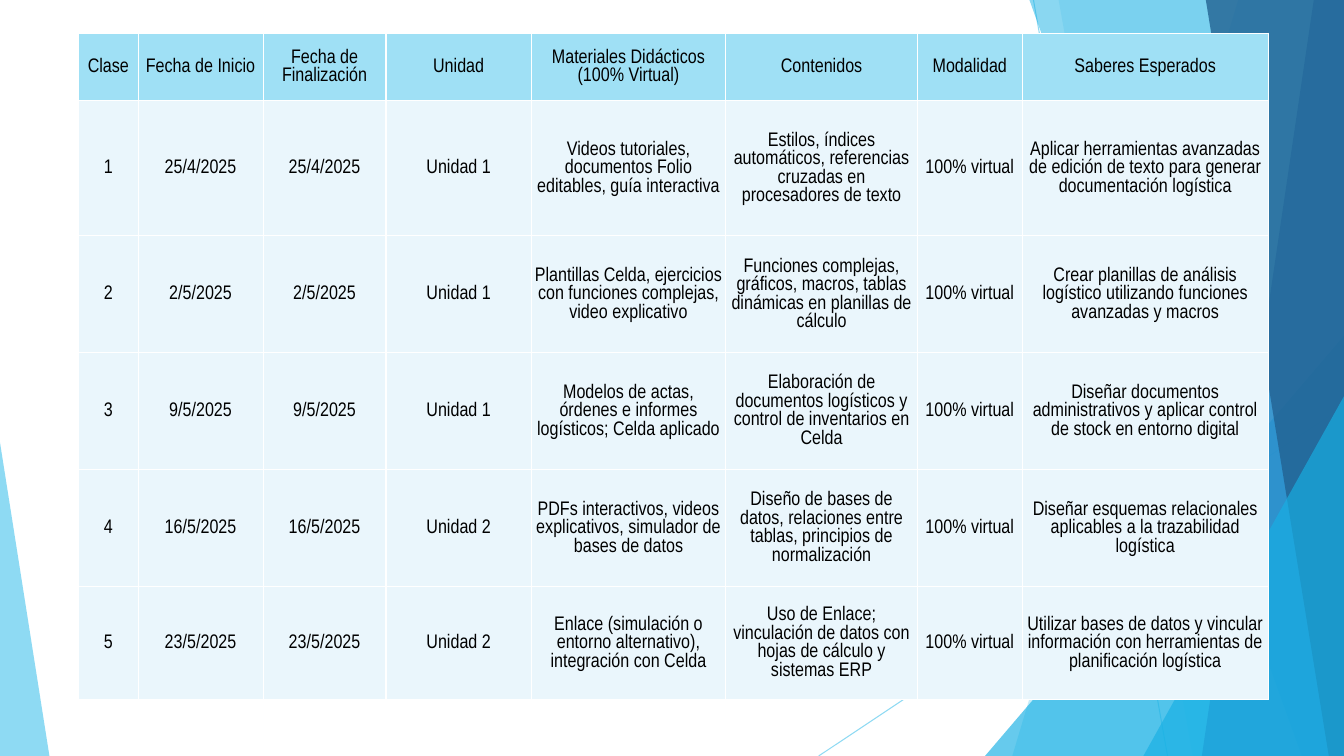
from dataclasses import dataclass

from lxml.etree import SubElement
from pptx import Presentation
from pptx.dml.color import RGBColor
from pptx.enum.shapes import MSO_CONNECTOR, MSO_SHAPE
from pptx.enum.text import MSO_ANCHOR, PP_ALIGN
from pptx.oxml.ns import qn
from pptx.util import Inches, Pt


@dataclass(frozen=True)
class Theme:
    """Colours, font and sizes of the deck."""

    sky: str = "5FCBEF"
    cyan: str = "17B0E4"
    blue: str = "2E83C3"
    navy: str = "226292"
    header: str = "9FE0F5"
    body: str = "EAF6FC"
    border: str = "FFFFFF"
    text: str = "000000"
    font: str = "Arial Narrow"
    text_size: float = 14
    border_width: float = 1
    ray_width: float = 0.75


THEME = Theme()
WIDTH, HEIGHT = 13.33, 7.5

COLUMN_WIDTHS = [0.59, 1.24, 1.22, 1.44, 1.93, 1.9, 1.04, 2.44]
ROW_HEIGHTS = [0.67, 1.34, 1.16, 1.16, 1.16, 1.12]
HEADINGS = ["Clase", "Fecha de Inicio", "Fecha de Finalización", "Unidad",
            "Materiales Didácticos (100% Virtual)", "Contenidos", "Modalidad",
            "Saberes Esperados"]
CLASSES = [
    ("25/4/2025", "Unidad 1",
     "Videos tutoriales, documentos Folio editables, guía interactiva",
     "Estilos, índices automáticos, referencias cruzadas en procesadores de texto",
     "Aplicar herramientas avanzadas de edición de texto para generar documentación logística"),
    ("2/5/2025", "Unidad 1",
     "Plantillas Celda, ejercicios con funciones complejas, video explicativo",
     "Funciones complejas, gráficos, macros, tablas dinámicas en planillas de cálculo",
     "Crear planillas de análisis logístico utilizando funciones avanzadas y macros"),
    ("9/5/2025", "Unidad 1",
     "Modelos de actas, órdenes e informes logísticos; Celda aplicado",
     "Elaboración de documentos logísticos y control de inventarios en Celda",
     "Diseñar documentos administrativos y aplicar control de stock en entorno digital"),
    ("16/5/2025", "Unidad 2",
     "PDFs interactivos, videos explicativos, simulador de bases de datos",
     "Diseño de bases de datos, relaciones entre tablas, principios de normalización",
     "Diseñar esquemas relacionales aplicables a la trazabilidad logística"),
    ("23/5/2025", "Unidad 2",
     "Enlace (simulación o entorno alternativo), integración con Celda",
     "Uso de Enlace; vinculación de datos con hojas de cálculo y sistemas ERP",
     "Utilizar bases de datos y vincular información con herramientas de planificación logística"),
]


def set_opacity(color_format, percent):
    """Make a solid colour partly transparent."""
    color = color_format._xFill.find(qn("a:srgbClr"))
    SubElement(color, qn("a:alpha"), val=str(percent * 1000))


def paint(shape, color, opacity):
    """Give a shape a translucent fill with no line or shadow."""
    shape.shadow.inherit = False
    shape.line.fill.background()
    shape.fill.solid()
    shape.fill.fore_color.rgb = RGBColor.from_string(color)
    set_opacity(shape.fill.fore_color, opacity)


def add_ray(slide, start, end):
    """Draw one thin translucent line."""
    points = [Inches(value) for value in (*start, *end)]
    ray = slide.shapes.add_connector(MSO_CONNECTOR.STRAIGHT, *points)
    ray.line.width = Pt(THEME.ray_width)
    ray.line.color.rgb = RGBColor.from_string(THEME.sky)
    properties = ray._element.spPr
    color = properties.find(".//" + qn("a:srgbClr"))
    SubElement(color, qn("a:alpha"), val="70000")
    SubElement(properties, qn("a:effectLst"))


def add_band(slide, top_left, bottom_left, color, opacity):
    """Draw a full-height band from a slanted edge to the right side."""
    builder = slide.shapes.build_freeform(Inches(top_left), 0)
    corners = [(WIDTH, 0), (WIDTH, HEIGHT), (bottom_left, HEIGHT)]
    builder.add_line_segments([(Inches(x), Inches(y)) for x, y in corners], close=True)
    paint(builder.convert_to_shape(), color, opacity)


def add_wedge(slide, left, top, width, apex, color, opacity):
    """Draw a triangle that stands on the bottom of the slide."""
    box = [Inches(value) for value in (left, top, width, HEIGHT - top)]
    wedge = slide.shapes.add_shape(MSO_SHAPE.ISOSCELES_TRIANGLE, *box)
    wedge.adjustments[0] = apex
    paint(wedge, color, opacity)


def add_facets(slide):
    """Build the faceted decoration on both sides of the slide."""
    add_ray(slide, (10.25, 0), (11.58, HEIGHT))
    add_ray(slide, (WIDTH, 4.03), (8.12, HEIGHT))
    add_band(slide, 12.28, 10.04, THEME.sky, 36)
    add_band(slide, 10.5, 11.83, THEME.sky, 20)
    add_wedge(slide, 9.77, 3.33, 3.56, 1, THEME.cyan, 66)
    add_band(slide, 10.21, 12.91, THEME.cyan, 50)
    add_band(slide, 13.03, 11.92, THEME.blue, 70)
    add_band(slide, 11.96, 13.18, THEME.navy, 80)
    add_wedge(slide, 11.34, 3.93, 1.99, 1, THEME.cyan, 66)
    add_wedge(slide, 0, 4.39, 0.49, 0, THEME.sky, 70)


def add_borders(cell):
    """Draw a solid border on all four sides of a cell."""
    properties = cell._tc.get_or_add_tcPr()
    for side in ("lnL", "lnR", "lnT", "lnB"):
        line = SubElement(properties, qn(f"a:{side}"), w=str(Pt(THEME.border_width)))
        fill = SubElement(line, qn("a:solidFill"))
        SubElement(fill, qn("a:srgbClr"), val=THEME.border)


def fill_cell(cell, text, color):
    """Write and format one table cell."""
    add_borders(cell)
    cell.fill.solid()
    cell.fill.fore_color.rgb = RGBColor.from_string(color)
    cell.vertical_anchor = MSO_ANCHOR.MIDDLE
    cell.margin_left = cell.margin_right = cell.margin_top = Inches(0.01)
    cell.margin_bottom = 0
    cell.text = text
    para = cell.text_frame.paragraphs[0]
    para.alignment = PP_ALIGN.CENTER
    para.font.name = THEME.font
    para.font.size = Pt(THEME.text_size)
    para.font.bold = False
    para.font.color.rgb = RGBColor.from_string(THEME.text)


def add_schedule(slide, left, top):
    """Build the class schedule table at the given corner."""
    rows = [HEADINGS]
    for number, (date, unit, materials, contents, skills) in enumerate(CLASSES, 1):
        rows.append([str(number), date, date, unit, materials, contents,
                     "100% virtual", skills])
    box = [Inches(value) for value in (left, top, sum(COLUMN_WIDTHS), sum(ROW_HEIGHTS))]
    table = slide.shapes.add_table(len(rows), len(HEADINGS), *box).table
    for column, width in zip(table.columns, COLUMN_WIDTHS):
        column.width = Inches(width)
    for index, (row, height) in enumerate(zip(table.rows, ROW_HEIGHTS)):
        row.height = Inches(height)
        color = THEME.body if index else THEME.header
        for cell, text in zip(row.cells, rows[index]):
            fill_cell(cell, text, color)


def main():
    """Create the deck and save it."""
    deck = Presentation()
    deck.slide_width, deck.slide_height = Inches(WIDTH), Inches(HEIGHT)
    slide = deck.slides.add_slide(deck.slide_layouts[6])
    add_facets(slide)
    add_schedule(slide, 0.78, 0.33)
    deck.save("out.pptx")


if __name__ == "__main__":
    main()
